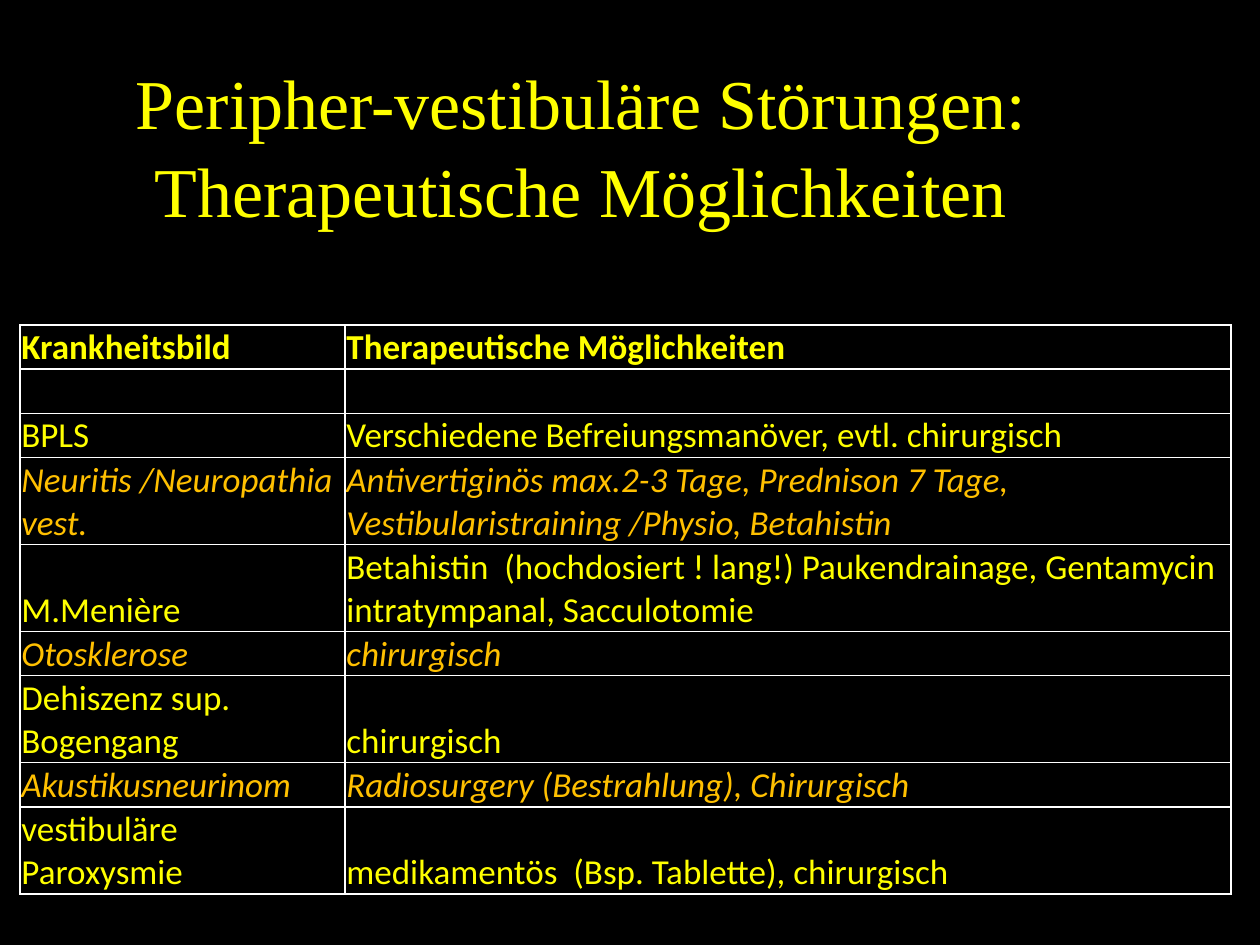
import pptx
import pptx.util
import pptx.dml.color
import pptx.enum.text
import pptx.oxml
import pptx.oxml.ns
from pptx.util import Inches

BLACK, WHITE, YELLOW, ORANGE = "000000", "FFFFFF", "FFFF00", "FFC000"
TITLE_LINES = ["Peripher-vestibuläre Störungen:", "Therapeutische Möglichkeiten"]
THERAPIES = [
    ("Krankheitsbild", "Therapeutische Möglichkeiten"),
    ("", ""),
    ("BPLS", "Verschiedene Befreiungsmanöver, evtl. chirurgisch"),
    ("Neuritis /Neuropathia vest.",
     "Antivertiginös max.2-3 Tage, Prednison 7 Tage, Vestibularistraining /Physio, Betahistin"),
    ("M.Menière",
     "Betahistin  (hochdosiert ! lang!) Paukendrainage, Gentamycin intratympanal, Sacculotomie"),
    ("Otosklerose", "chirurgisch"),
    ("Dehiszenz sup. Bogengang", "chirurgisch"),
    ("Akustikusneurinom", "Radiosurgery (Bestrahlung), Chirurgisch"),
    ("vestibuläre Paroxysmie", "medikamentös  (Bsp. Tablette), chirurgisch"),
]
HIGHLIGHTED_ROWS = {3, 5, 7}
TWO_LINE_ROWS = {3, 4, 6, 8}


def color(value):
    return pptx.dml.color.RGBColor.from_string(value)


def add_run(para, text, font, size, hue, bold=False, italic=False):
    span = para.add_run()
    span.text = text
    span.font.name = font
    span.font.size = pptx.util.Pt(size)
    span.font.color.rgb = color(hue)
    span.font.bold = bold
    span.font.italic = italic


def add_borders(cell, hue, points):
    properties = cell._tc.get_or_add_tcPr()
    for index, side in enumerate(("lnL", "lnR", "lnT", "lnB")):
        line = pptx.oxml.parse_xml(
            f'<a:{side} {pptx.oxml.ns.nsdecls("a")} w="{pptx.util.Pt(points)}">'
            f'<a:solidFill><a:srgbClr val="{hue}"/></a:solidFill></a:{side}>')
        properties.insert(index, line)


def place_title(page, left, top, width, height):
    title = page.shapes.title
    title.left, title.top, title.width, title.height = left, top, width, height
    frame = title.text_frame
    frame.word_wrap = False
    frame.auto_size = pptx.enum.text.MSO_AUTO_SIZE.NONE
    frame.vertical_anchor = pptx.enum.text.MSO_ANCHOR.TOP
    for index, text in enumerate(TITLE_LINES):
        para = frame.add_paragraph() if index else frame.paragraphs[0]
        para.alignment = pptx.enum.text.PP_ALIGN.CENTER
        para.line_spacing = 1.05
        add_run(para, text, "Times New Roman", 40, YELLOW)


def fill_cell(cell, text, hue, bold, italic):
    cell.fill.solid()
    cell.fill.fore_color.rgb = color(BLACK)
    cell.vertical_anchor = pptx.enum.text.MSO_ANCHOR.BOTTOM
    cell.margin_left = cell.margin_right = cell.margin_top = Inches(0.01)
    cell.margin_bottom = 0
    if text:
        add_run(cell.text_frame.paragraphs[0], text, "Calibri", 20, hue, bold, italic)
    add_borders(cell, WHITE, 1)


def place_therapies(page, left, top, width, height):
    table = page.shapes.add_table(len(THERAPIES), 2, left, top, width, height).table
    table.horz_banding = False
    table.columns[0].width = Inches(2.58)
    table.columns[1].width = width - Inches(2.58)
    for row, texts in enumerate(THERAPIES):
        table.rows[row].height = Inches(0.69 if row in TWO_LINE_ROWS else 0.35)
        highlighted = row in HIGHLIGHTED_ROWS
        for column, text in enumerate(texts):
            fill_cell(table.cell(row, column), text,
                      ORANGE if highlighted else YELLOW, row == 0, highlighted)


def main():
    deck = pptx.Presentation()
    deck.slide_width, deck.slide_height = Inches(10), Inches(7.5)
    page = deck.slides.add_slide(deck.slide_layouts[5])
    page.background.fill.solid()
    page.background.fill.fore_color.rgb = color(BLACK)
    place_therapies(page, Inches(0.16), Inches(2.58), Inches(9.61), Inches(4.51))
    place_title(page, Inches(0.65), Inches(0.39), Inches(7.92), Inches(1.85))
    deck.save("out.pptx")


if __name__ == "__main__":
    main()
